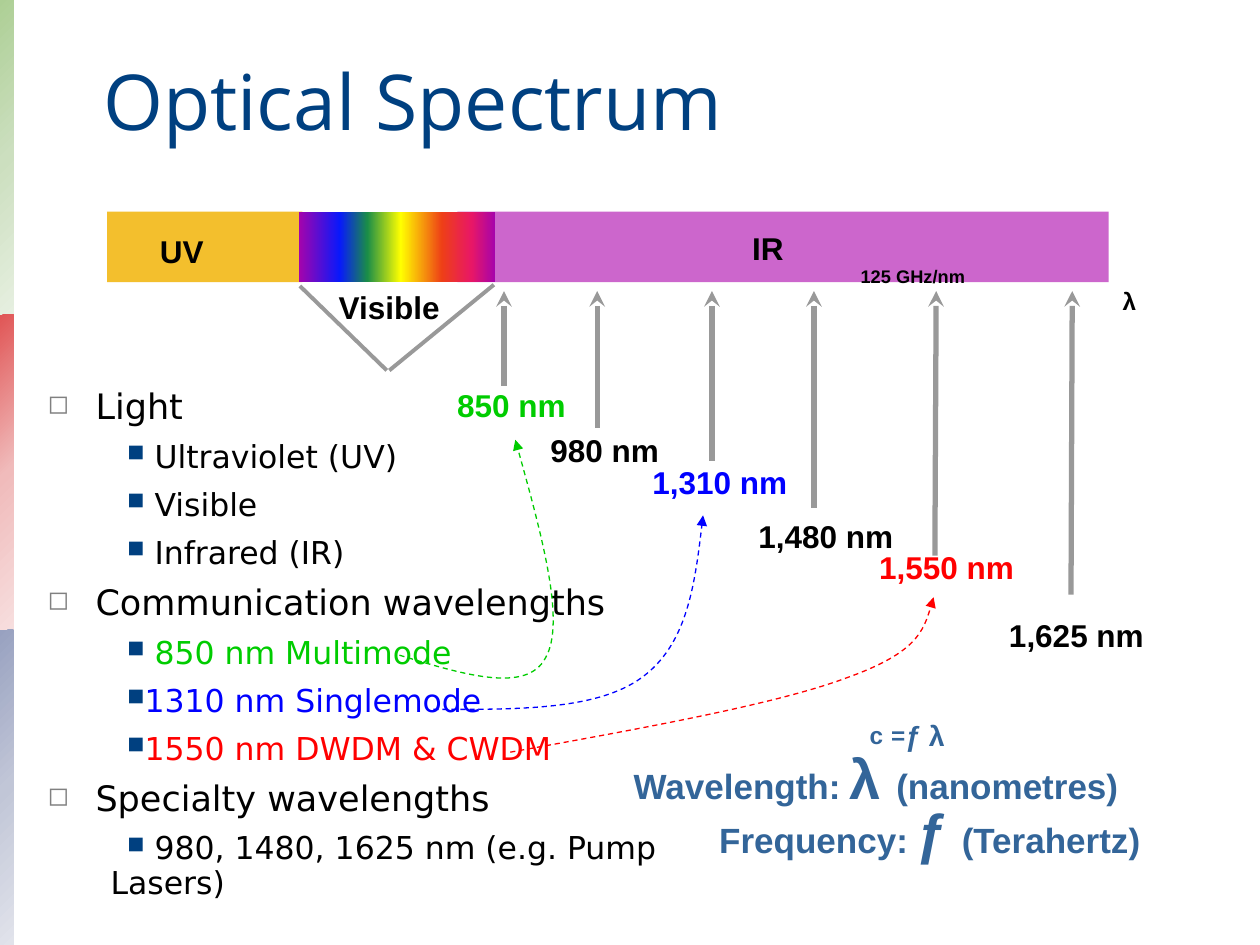
from dataclasses import dataclass

import pptx
import pptx.dml.color
import pptx.enum.dml
import pptx.enum.shapes
import pptx.enum.text
import pptx.oxml
import pptx.oxml.ns
import pptx.util
from pptx.util import Inches

COLORS = {
    "black": "000000", "navy": "004080", "gray": "999999", "bullet": "808080",
    "green": "00CC00", "blue": "0000FF", "red": "FF0000", "steel": "336599",
    "gold": "F3BF2D", "orchid": "CC66CC",
}
STRIPES = [
    ("ADCF95", "CCDFBF", "E6EFE0"),
    ("E05555", "F0BBBB", "F7DEDE"),
    ("98A1C0", "C1C6D7", "E1E3EB"),
]
RAINBOW = [(0, "A603AB"), (21, "0819FB"), (35, "1A8D48"), (52, "FFFF00"),
           (73, "EE3F17"), (88, "E81766"), (100, "A603AB")]
BAR_TOP, BAR_HEIGHT = 1.68, 0.56
ARROW_TOP = 2.31


@dataclass
class Piece:
    text: str
    size: int = 18
    baseline: int = 0


@dataclass
class Label:
    box: tuple[float, float, float, float]
    pieces: list[Piece]
    color: str = "black"
    margins: tuple[float, float] = (0.1, 0.05)
    wrap: bool = False
    line_points: int | None = None


@dataclass
class Wavelength:
    text: str
    left: float
    top: float
    width: float
    arrow_top_x: float
    arrow_bottom: tuple[float, float]
    color: str = "black"


@dataclass
class Bullet:
    text: str
    level: int = 1
    color: str = "black"


@dataclass
class Curve:
    points: list[tuple[float, float]]
    color: str


SMALL = (0.08, 0.04)
LABELS = [
    Label((1.17, 1.79, 0.85, 0.4), [Piece("UV")], wrap=True),
    Label((5.89, 1.78, 0.41, 0.38), [Piece("IR")], margins=SMALL),
    Label((2.59, 2.38, 1.14, 0.25), [Piece("Visible")], wrap=True, line_points=11),
    Label((8.83, 2.01, 0.34, 0.48), [Piece("λ", 24, -25)], margins=SMALL),
    Label((6.75, 1.9, 1.59, 0.38), [Piece("125 GHz/nm", 18, -25)], margins=SMALL),
    Label((4.93, 5.85, 4.91, 0.63),
          [Piece("Wavelength:", 20), Piece(" "), Piece("λ ", 32), Piece("(nanometres)", 20)],
          "steel", wrap=True),
    Label((5.61, 6.28, 3.54, 0.63),
          [Piece("Frequency:", 20), Piece(" "), Piece("ƒ", 32), Piece(" ", 28),
           Piece("(Terahertz)", 20)], "steel"),
    Label((6.75, 5.39, 1.29, 0.57),
          [Piece(" c", 24, -25), Piece(" ", 28, -25), Piece("=", 24, -25),
           Piece("ƒ λ", 28, -25)], "steel"),
]
WAVELENGTHS = [
    Wavelength("850 nm", 3.53, 3.16, 1.19, 4, (4, 3.06), "green"),
    Wavelength("980 nm", 4.27, 3.52, 1.18, 4.74, (4.74, 3.4)),
    Wavelength("1,310 nm", 5.08, 3.77, 1.43, 5.65, (5.65, 3.66), "blue"),
    Wavelength("1,480 nm", 5.92, 4.2, 1.36, 6.46, (6.46, 4.03)),
    Wavelength("1,550 nm", 6.88, 4.45, 1.36, 7.43, (7.42, 4.41), "red"),
    Wavelength("1,625 nm", 7.91, 4.99, 1.36, 8.51, (8.5, 4.72)),
]
BULLETS = [
    Bullet("Light", 0),
    Bullet(" Ultraviolet (UV)"),
    Bullet(" Visible"),
    Bullet(" Infrared (IR)"),
    Bullet("Communication wavelengths", 0),
    Bullet(" 850 nm Multimode", color="green"),
    Bullet("1310 nm Singlemode", color="blue"),
    Bullet("1550 nm DWDM & CWDM", color="red"),
    Bullet("Specialty wavelengths", 0),
    Bullet(" 980, 1480, 1625 nm (e.g. Pump Lasers)"),
]
CURVES = [
    Curve([(3.17, 5.2), (3.67, 5.35), (4.18, 5.51), (4.33, 5.22),
           (4.49, 4.94), (4.29, 4.21), (4.09, 3.49)], "green"),
    Curve([(3.44, 5.63), (4.09, 5.63), (4.73, 5.64), (5.09, 5.38),
           (5.45, 5.12), (5.52, 4.61), (5.58, 4.09)], "blue"),
    Curve([(4.05, 5.97), (5.1, 5.78), (6.16, 5.59), (6.72, 5.38),
           (7.28, 5.18), (7.35, 4.96), (7.41, 4.74)], "red"),
]


def rgb(name: str) -> pptx.dml.color.RGBColor:
    return pptx.dml.color.RGBColor.from_string(COLORS[name])


def add_child(parent, tag: str, **attributes: str):
    child = pptx.oxml.parse_xml(f"<{tag} {pptx.oxml.ns.nsdecls('a')}/>")
    for key, value in attributes.items():
        child.set(key, value)
    parent.append(child)
    return child


def add_bar(slide, left: float, top: float, width: float, height: float):
    shape = slide.shapes.add_shape(
        pptx.enum.shapes.MSO_SHAPE.RECTANGLE,
        Inches(left), Inches(top), Inches(width), Inches(height))
    shape.shadow.inherit = False
    shape.line.fill.background()
    return shape


def fill_solid(shape, color: str) -> None:
    shape.fill.solid()
    shape.fill.fore_color.rgb = rgb(color)


def fill_gradient(shape, stops: list[tuple[int, str]], angle: int) -> None:
    shape.fill.gradient()
    shape.fill.gradient_angle = angle
    stop_list = shape._element.find(".//" + pptx.oxml.ns.qn("a:gsLst"))
    for stop in list(stop_list):
        stop_list.remove(stop)
    for position, color in stops:
        stop = add_child(stop_list, "a:gs", pos=str(position * 1000))
        add_child(stop, "a:srgbClr", val=color)


def add_line(slide, start: tuple, end: tuple, width: float, head: str = "") -> None:
    connector = slide.shapes.add_connector(
        pptx.enum.shapes.MSO_CONNECTOR.STRAIGHT, *map(Inches, start + end))
    connector.line.color.rgb = rgb("gray")
    connector.line.width = pptx.util.Pt(width)
    if head:
        add_child(connector.line._get_or_add_ln(), "a:headEnd", type=head)
    add_child(connector._element.spPr, "a:effectLst")


def style_run(run, font: str, size: int, color: str, bold: bool = False) -> None:
    run.font.name = font
    run.font.size = pptx.util.Pt(size)
    run.font.bold = bold
    run.font.color.rgb = rgb(color)


def add_label(slide, label: Label) -> None:
    text_frame = slide.shapes.add_textbox(*map(Inches, label.box)).text_frame
    text_frame.word_wrap = label.wrap
    text_frame.auto_size = pptx.enum.text.MSO_AUTO_SIZE.SHAPE_TO_FIT_TEXT
    side, edge = map(Inches, label.margins)
    text_frame.margin_left = text_frame.margin_right = side
    text_frame.margin_top = text_frame.margin_bottom = edge
    paragraph = text_frame.paragraphs[0]
    if label.line_points:
        paragraph.line_spacing = pptx.util.Pt(label.line_points)
    for piece in label.pieces:
        run = paragraph.add_run()
        run.text = piece.text
        style_run(run, "Arial", piece.size, label.color, True)
        if piece.baseline:
            run._r.get_or_add_rPr().set("baseline", str(piece.baseline * 1000))


def add_wavelength(slide, mark: Wavelength) -> None:
    add_line(slide, (mark.arrow_top_x, ARROW_TOP), mark.arrow_bottom, 3, "stealth")
    add_label(slide, Label((mark.left, mark.top, mark.width, 0.25), [Piece(mark.text)],
                           mark.color, wrap=True, line_points=11))


def add_title(slide) -> None:
    text_frame = slide.shapes.add_textbox(
        Inches(0.72), Inches(0.33), Inches(8.91), Inches(0.92)).text_frame
    text_frame.word_wrap = True
    text_frame.vertical_anchor = pptx.enum.text.MSO_ANCHOR.MIDDLE
    text_frame.text = "Optical Spectrum"
    style_run(text_frame.paragraphs[0].runs[0], "Open Sans", 44, "navy")


def add_bullets(slide) -> None:
    text_frame = slide.shapes.add_textbox(
        Inches(0.28), Inches(3.04), Inches(5.31), Inches(3.91)).text_frame
    text_frame.word_wrap = True
    text_frame.text = "\n".join(bullet.text for bullet in BULLETS)
    levels = [(0.38, -0.38, "◻", "bullet", 20), (0.5, 0.13, "■", "navy", 18)]
    for index, (bullet, paragraph) in enumerate(zip(BULLETS, text_frame.paragraphs)):
        margin, indent, character, color, size = levels[bullet.level]
        paragraph.level = bullet.level
        paragraph.line_spacing = 0.9
        paragraph.space_before = pptx.util.Pt(8 if index else 0)
        properties = paragraph._p.get_or_add_pPr()
        properties.set("marL", str(Inches(margin)))
        properties.set("indent", str(Inches(indent)))
        add_child(add_child(properties, "a:buClr"), "a:srgbClr", val=COLORS[color])
        add_child(properties, "a:buSzPct", val="75000")
        add_child(properties, "a:buChar", char=character)
        style_run(paragraph.runs[0], "DejaVu Sans", size, bullet.color)


def add_curve(slide, curve: Curve) -> None:
    start, *controls = [(Inches(x), Inches(y)) for x, y in curve.points]
    builder = slide.shapes.build_freeform(*start)
    builder.add_line_segments(controls, close=False)
    shape = builder.convert_to_shape()
    shape.shadow.inherit = False
    shape.fill.background()
    shape.line.color.rgb = rgb(curve.color)
    shape.line.width = pptx.util.Pt(0.75)
    shape.line.dash_style = pptx.enum.dml.MSO_LINE.DASH
    add_child(shape.line._get_or_add_ln(), "a:tailEnd", type="triangle")
    segments = list(shape._element.iter(pptx.oxml.ns.qn("a:lnTo")))
    outline = segments[0].getparent()
    for first in range(0, len(segments), 3):
        bezier = add_child(outline, "a:cubicBezTo")
        for segment in segments[first:first + 3]:
            bezier.append(segment[0])
            outline.remove(segment)


def main() -> None:
    presentation = pptx.Presentation()
    presentation.slide_width, presentation.slide_height = Inches(10), Inches(7.5)
    slide = presentation.slides.add_slide(presentation.slide_layouts[6])
    for index, colors in enumerate(STRIPES):
        stripe = add_bar(slide, -0.01, index * 2.5, 0.12, 2.5)
        fill_gradient(stripe, list(zip((0, 50, 100), colors)), 315)
    add_title(slide)
    add_bullets(slide)
    fill_solid(add_bar(slide, 0.85, BAR_TOP, 1.55, BAR_HEIGHT), "gold")
    fill_solid(add_bar(slide, 3.63, BAR_TOP, 5.17, BAR_HEIGHT), "orchid")
    fill_gradient(add_bar(slide, 2.37, BAR_TOP, 1.56, BAR_HEIGHT), RAINBOW, 0)
    add_line(slide, (2.38, 2.27), (3.07, 2.94), 2.25)
    add_line(slide, (3.09, 2.94), (3.92, 2.26), 2.25)
    for mark in WAVELENGTHS:
        add_wavelength(slide, mark)
    for label in LABELS:
        add_label(slide, label)
    for curve in CURVES:
        add_curve(slide, curve)
    presentation.save("out.pptx")


if __name__ == "__main__":
    main()
